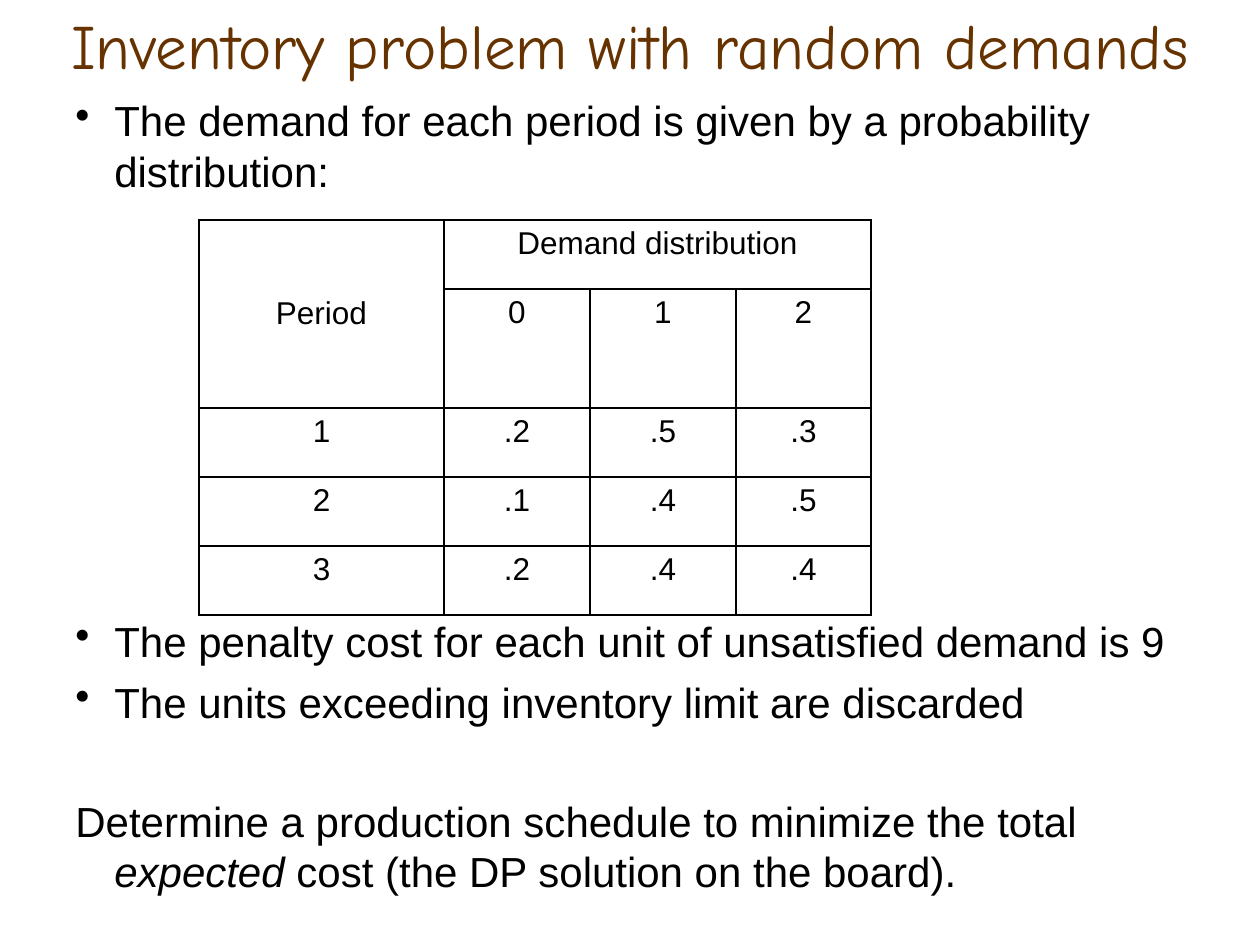
from dataclasses import dataclass

from lxml import etree
from pptx import Presentation
from pptx import util as u
from pptx.dml.color import RGBColor
from pptx.enum import text
from pptx.oxml.ns import qn


@dataclass(frozen=True)
class Theme:
    heading: RGBColor = RGBColor(0x66, 0x33, 0x00)
    ink: RGBColor = RGBColor(0, 0, 0)
    heading_font: str = "Comic Neue"
    body_font: str = "Arial"
    heading_size: int = 36
    body_size: int = 24
    table_size: int = 18


theme = Theme()
PX = u.Inches(1) // 126


def add_span(para, words, size, font=theme.body_font, color=theme.ink, italic=False):
    span = para.add_run()
    span.text = words
    span.font.size = u.Pt(size)
    span.font.name = font
    span.font.color.rgb = color
    span.font.italic = italic
    span.font.bold = False


def add_border(cell):
    """Draw a 1 pt line on all four sides of a table cell."""
    properties = cell._tc.get_or_add_tcPr()
    for index, side in enumerate(("lnL", "lnR", "lnT", "lnB")):
        line = etree.Element(qn(f"a:{side}"), w=str(u.Pt(1)))
        fill = etree.SubElement(line, qn("a:solidFill"))
        etree.SubElement(fill, qn("a:srgbClr"), val=str(theme.ink))
        properties.insert(index, line)


deck = Presentation()
deck.slide_width, deck.slide_height = 1260 * PX, 945 * PX
page = deck.slides.add_slide(deck.slide_layouts[6])

# Title
title = page.shapes.add_textbox(0, 0, 1260 * PX, 88 * PX).text_frame
title.word_wrap = True
title.vertical_anchor = text.MSO_ANCHOR.MIDDLE
title.paragraphs[0].alignment = text.PP_ALIGN.CENTER
add_span(title.paragraphs[0], "Inventory problem with random demands",
         theme.heading_size, theme.heading_font, theme.heading)

# Body: space before in px, bulleted, pieces of (words, italic)
body_paragraphs = [
    (0, True, [("The demand for each period is given by a probability distribution:", False)]),
    (420, True, [("The penalty cost for each unit of unsatisfied demand is 9", False)]),
    (10, True, [("The units exceeding inventory limit are discarded", False)]),
    (69, False, [("Determine a production schedule to minimize the total ", False),
                 ("expected", True),
                 (" cost (the DP solution on the board).", False)]),
]
body = page.shapes.add_textbox(0, 84 * PX, 1260 * PX, 861 * PX).text_frame
body.word_wrap = True
body.margin_top = 11 * PX
for number, (gap, bulleted, pieces) in enumerate(body_paragraphs):
    para = body.add_paragraph() if number else body.paragraphs[0]
    para.space_before = u.Emu(gap * PX)
    properties = para._p.get_or_add_pPr()
    properties.set("marL", str(102 * PX))
    properties.set("indent", str(-39 * PX))
    if bulleted:
        etree.SubElement(properties, qn("a:buChar"), char="•")
    else:
        etree.SubElement(properties, qn("a:buNone"))
    for words, italic in pieces:
        add_span(para, words, theme.body_size, italic=italic)

# Demand table
demand_rows = [
    ["Period", "Demand distribution", "", ""],
    ["", "0", "1", "2"],
    ["1", ".2", ".5", ".3"],
    ["2", ".1", ".4", ".5"],
    ["3", ".2", ".4", ".4"],
]
column_widths = [245, 146, 146, 135]
row_heights = [69, 119, 69, 69, 69]
table = page.shapes.add_table(
    len(row_heights), len(column_widths), 199 * PX, 220 * PX,
    sum(column_widths) * PX, sum(row_heights) * PX).table
table.first_row = table.horz_banding = False
for column, width in zip(table.columns, column_widths):
    column.width = width * PX
for row, height in zip(table.rows, row_heights):
    row.height = height * PX
for r, values in enumerate(demand_rows):
    for c, value in enumerate(values):
        cell = table.cell(r, c)
        cell.fill.background()
        add_border(cell)
        if value:
            para = cell.text_frame.paragraphs[0]
            para.alignment = text.PP_ALIGN.CENTER
            add_span(para, value, theme.table_size)
table.cell(0, 0).merge(table.cell(1, 0))
table.cell(0, 1).merge(table.cell(0, 3))
table.cell(0, 0).vertical_anchor = text.MSO_ANCHOR.MIDDLE

deck.save("out.pptx")
